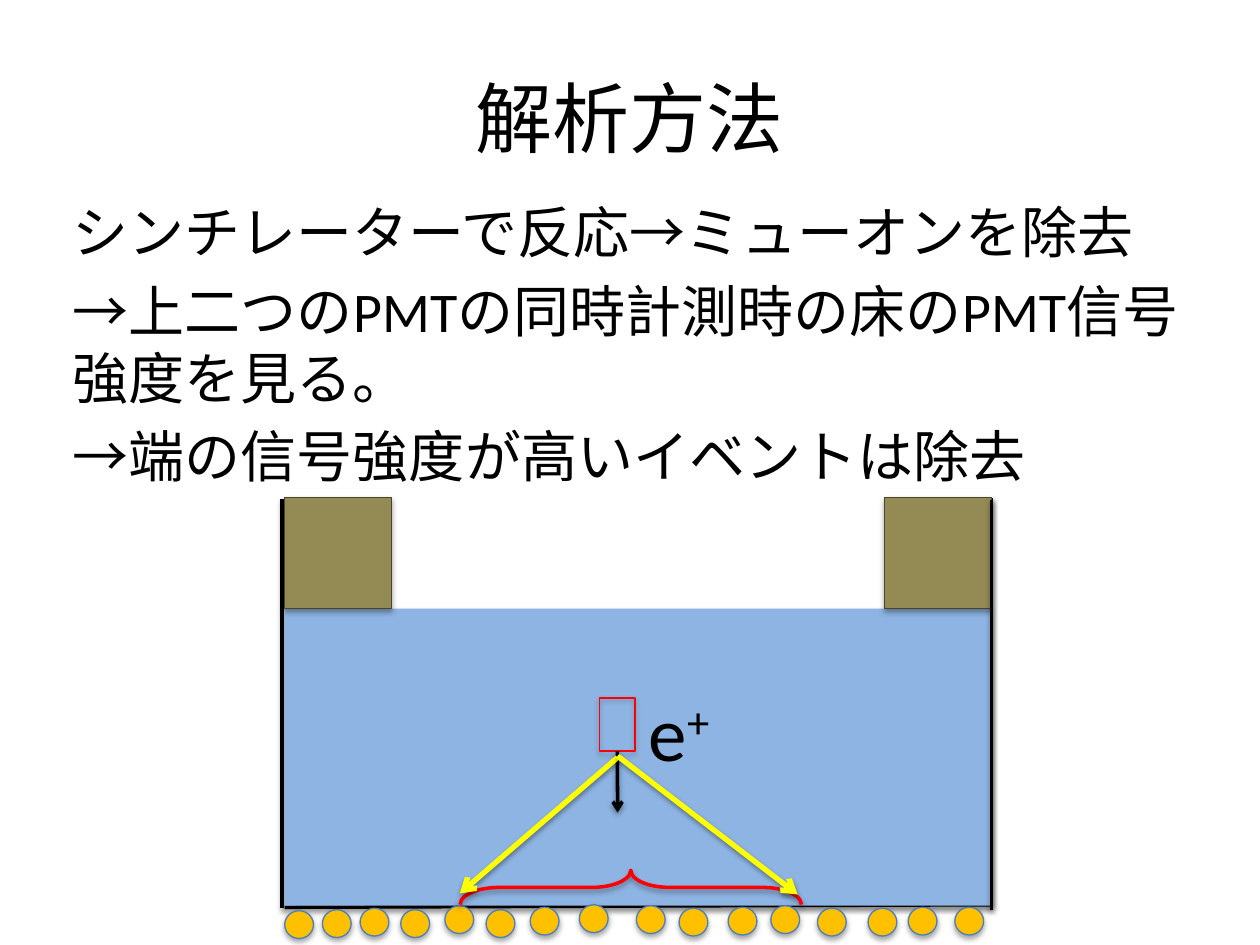
"""Build the slide on the analysis method with its detector sketch."""
from typing import NamedTuple, Optional

from pptx import Presentation
from pptx.dml.color import RGBColor
from pptx.enum.shapes import MSO_CONNECTOR, MSO_SHAPE
from pptx.enum.text import MSO_ANCHOR, PP_ALIGN
from pptx.oxml import parse_xml
from pptx.oxml.ns import nsdecls
from pptx.util import Cm, Pt

STRAIGHT = MSO_CONNECTOR.STRAIGHT
RECTANGLE, OVAL, BRACE = MSO_SHAPE.RECTANGLE, MSO_SHAPE.OVAL, MSO_SHAPE.LEFT_BRACE
TOP, MIDDLE = MSO_ANCHOR.TOP, MSO_ANCHOR.MIDDLE
LEFT, CENTER = PP_ALIGN.LEFT, PP_ALIGN.CENTER

FONT = "Calibri"
COLORS = {
    "black": "000000", "red": "FF0000", "yellow": "FFFF00", "water": "8EB4E3",
    "sensor": "948A54", "sensor_edge": "4A452A", "bulb": "FFC000", "bulb_edge": "4B7EBC",
}


class Figure(NamedTuple):
    """A preset shape with its place in centimetres and its colours."""
    preset: MSO_SHAPE
    left: float
    top: float
    width: float
    height: float
    fill: Optional[str] = None
    edge: Optional[str] = None
    weight: float = 0.75


class Stroke(NamedTuple):
    """A straight line between two points in centimetres."""
    start: tuple[float, float]
    end: tuple[float, float]
    color: str = "black"
    weight: float = 2
    arrow: bool = False


class TextBlock(NamedTuple):
    """Paragraphs of one size in a box measured in centimetres."""
    left: float
    top: float
    width: float
    height: float
    size: float
    lines: tuple[str, ...]
    align: PP_ALIGN = LEFT
    anchor: MSO_ANCHOR = TOP
    space_before: float = 0


TITLE = TextBlock(1.27, 0.76, 22.86, 3.18, 44, ("解析方法",), CENTER, MIDDLE)
METHOD = TextBlock(1.22, 3.86, 22.86, 12.57, 32, (
    "シンチレーターで反応→ミューオンを除去",
    "→上二つのPMTの同時計測時の床のPMT信号強度を見る。",
    "→端の信号強度が高いイベントは除去",
), space_before=6.4)
POSITRON = TextBlock(12.83, 13.67, 5.26, 3.6, 44, ("e",))

TANK_WALLS = (
    Stroke((5.69, 10.06), (5.69, 18.31)),
    Stroke((5.74, 18.29), (19.99, 18.24)),
    Stroke((19.99, 18.21), (19.99, 10.03)),
)
FRONT_WALL = Stroke((19.99, 10.08), (19.99, 18.34))
WATER = Figure(RECTANGLE, 5.74, 12.27, 14.27, 5.99, "water")
EVENT = Figure(RECTANGLE, 12.09, 14.07, 0.71, 1.07, None, "red")
TOP_SENSORS = [
    Figure(RECTANGLE, left, 10.03, 2.16, 2.24, "sensor", "sensor_edge")
    for left in (17.83, 5.74)
]
BULB_PLACES = (
    (5.74, 18.36), (6.5, 18.34), (7.26, 18.31), (8.08, 18.34),
    (8.97, 18.26), (9.8, 18.34), (10.69, 18.29), (11.68, 18.24),
    (12.83, 18.26), (13.69, 18.31), (14.68, 18.29), (15.54, 18.26),
    (16.48, 18.31), (17.5, 18.31), (18.31, 18.29), (19.25, 18.29),
)
FLOOR_BRACE = Figure(BRACE, 12.37, 14.45, 0.69, 6.88, None, "red", 2)
DOWNWARD = Stroke((12.45, 15.14), (12.45, 16.38), arrow=True)
LIGHT_RAYS = (
    Stroke((12.45, 15.27), (9.27, 18.01), "yellow", 3, True),
    Stroke((12.45, 15.24), (16.08, 18.03), "yellow", 3, True),
)


def color(name: str) -> RGBColor:
    """Look up a named colour."""
    return RGBColor.from_string(COLORS[name])


def cast_shadow(item, distance: float, opacity: int) -> None:
    """Give a styled shape or connector a soft shadow straight below it."""
    item._element.spPr.append(parse_xml(
        f'<a:effectLst {nsdecls("a")}><a:outerShdw blurRad="{Pt(3.1)}" '
        f'dist="{Pt(distance)}" dir="5400000" rotWithShape="0">'
        f'<a:srgbClr val="{COLORS["black"]}"><a:alpha val="{opacity * 1000}"/>'
        '</a:srgbClr></a:outerShdw></a:effectLst>'))


def draw_figure(page, figure: Figure):
    """Draw a preset shape and return it."""
    shape = page.shapes.add_shape(
        figure.preset, Cm(figure.left), Cm(figure.top), Cm(figure.width), Cm(figure.height))
    if figure.fill:
        shape.fill.solid()
        shape.fill.fore_color.rgb = color(figure.fill)
    else:
        shape.fill.background()
    if figure.edge:
        shape.line.color.rgb = color(figure.edge)
        shape.line.width = Pt(figure.weight)
    else:
        shape.line.fill.background()
    cast_shadow(shape, 1.8, 35)
    return shape


def draw_stroke(page, stroke: Stroke):
    """Draw a straight line or arrow and return it."""
    connector = page.shapes.add_connector(
        STRAIGHT, *(Cm(value) for value in stroke.start + stroke.end))
    connector.line.color.rgb = color(stroke.color)
    connector.line.width = Pt(stroke.weight)
    if stroke.arrow:
        connector.line._get_or_add_ln().append(
            parse_xml(f'<a:tailEnd {nsdecls("a")} type="arrow"/>'))
    cast_shadow(connector, 1.6, 38)
    return connector


def write_text(page, block: TextBlock):
    """Write a block of paragraphs and return its text frame."""
    box = page.shapes.add_textbox(
        Cm(block.left), Cm(block.top), Cm(block.width), Cm(block.height))
    frame = box.text_frame
    frame.word_wrap = True
    frame.vertical_anchor = block.anchor
    frame.text = "\n".join(block.lines)
    for para in frame.paragraphs:
        para.alignment = block.align
        para.space_before = Pt(block.space_before)
        para.font.name = FONT
        para.font.size = Pt(block.size)
        para.font.color.rgb = color("black")
    return frame


def main() -> None:
    """Assemble and save the slide."""
    deck = Presentation()
    deck.slide_width, deck.slide_height = Cm(25.4), Cm(19.05)
    page = deck.slides.add_slide(deck.slide_layouts[6])

    write_text(page, TITLE)
    write_text(page, METHOD)
    for wall in TANK_WALLS:
        draw_stroke(page, wall)
    draw_figure(page, WATER)
    event = draw_figure(page, EVENT)
    draw_stroke(page, DOWNWARD).begin_connect(event, 2)
    for sensor in TOP_SENSORS:
        draw_figure(page, sensor)
    for left, top in BULB_PLACES:
        draw_figure(page, Figure(OVAL, left, top, 0.58, 0.56, "bulb", "bulb_edge"))
    draw_stroke(page, FRONT_WALL)
    brace = draw_figure(page, FLOOR_BRACE)
    brace.rotation = 90
    brace.adjustments[0] = 1.14
    charge = write_text(page, POSITRON).paragraphs[0].add_run()
    charge.text = "+"
    charge._r.get_or_add_rPr().set("baseline", "30000")
    for ray in LIGHT_RAYS:
        draw_stroke(page, ray)

    deck.save("out.pptx")


if __name__ == "__main__":
    main()
